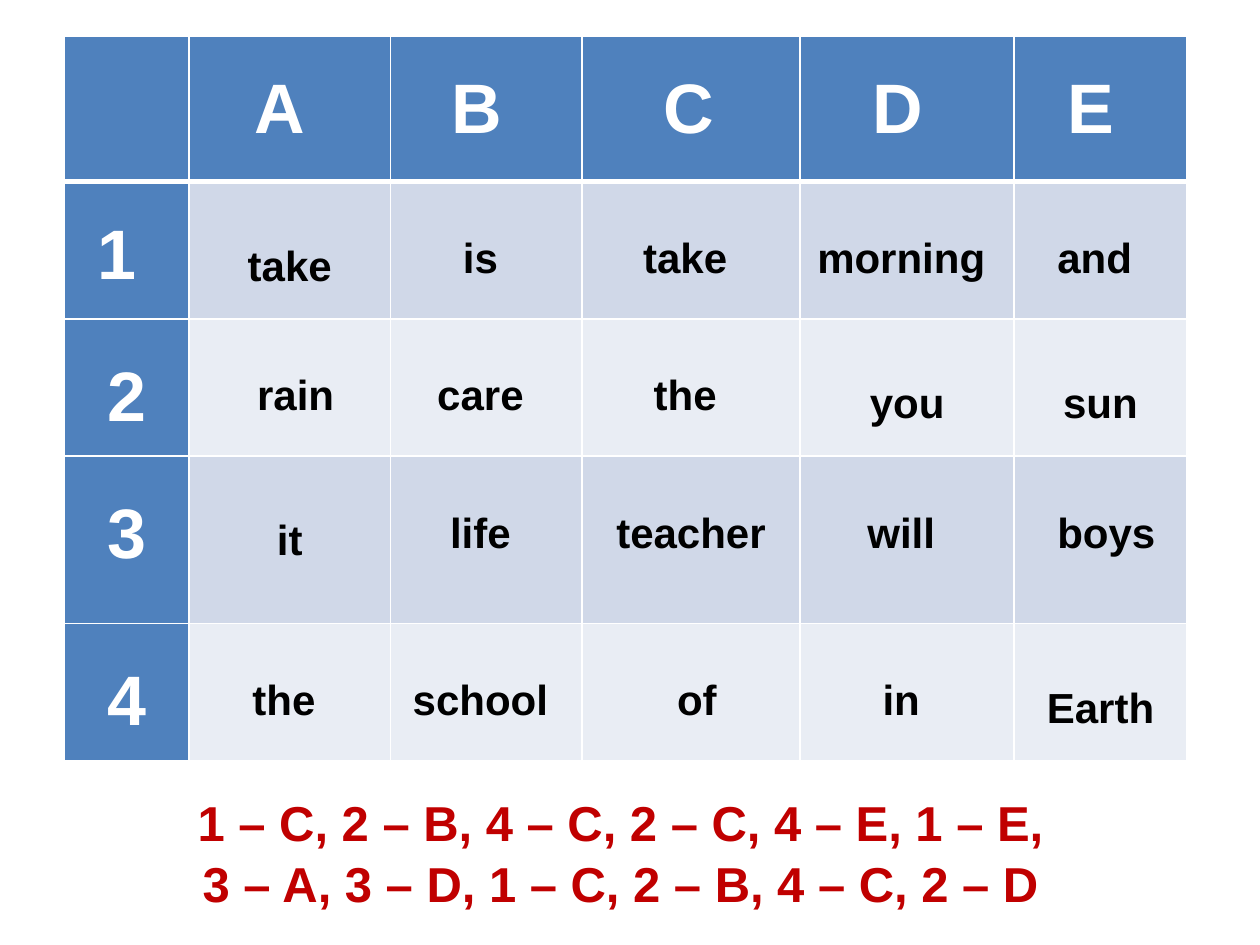
from dataclasses import dataclass

from lxml import etree
from pptx import Presentation
from pptx.dml.color import RGBColor
from pptx.enum.text import PP_ALIGN
from pptx.oxml.ns import qn
from pptx.util import Inches, Pt

CENTER = PP_ALIGN.CENTER

# Each cell: text, sideways nudge (-1 left, 0 none, 1 right), top inset in inches
MID, LOW = 0.43, 0.49
HEADS = [("", 0, 0), ("А", -1, 0.27), ("В", -1, 0.27),
         ("С", -0.25, 0.27), ("D", -1, 0.27), ("Е", -1, 0.27)]
WORDS = [
    [("1", -1, 0.28), ("take", 0, LOW), ("is", -1, MID),
     ("take", -1, MID), ("morning", -1, MID), ("and", -1, MID)],
    [("2", 0, 0.31), ("rain", 1, MID), ("care", -1, MID),
     ("the", -1, MID), ("you", 0, LOW), ("sun", 0, LOW)],
    [("3", 0, 0.31), ("it", 0, LOW), ("life", -1, MID),
     ("teacher", 0, MID), ("will", -1, MID), ("boys", 1, MID)],
    [("4", 0, 0.31), ("the", -1, MID), ("school", -1, MID),
     ("of", 1, MID), ("in", -1, MID), ("Earth", 0, LOW)],
]
COLS = [0.99, 1.6, 1.52, 1.73, 1.7, 1.37]
ROWS = [1.15, 1.09, 1.09, 1.33, 1.09]
CODE = ["1 – C, 2 – B, 4 – C, 2 – C, 4 – E, 1 – E,",
        "3 – A, 3 – D, 1 – C, 2 – B, 4 – C, 2 – D"]


@dataclass(frozen=True)
class Theme:
    font: str = "Arial"
    head: str = "4F81BD"
    bands: tuple = ("D0D8E8", "E9EDF4")
    white: str = "FFFFFF"
    black: str = "000000"
    red: str = "C00000"
    big: int = 40
    word: int = 24
    code: int = 28


class Page:
    def __init__(self, slide, theme):
        self.slide = slide
        self.theme = theme

    def add_run(self, para, text, size, color):
        para.alignment = CENTER
        run = para.add_run()
        run.text = text
        run.font.name = self.theme.font
        run.font.size = Pt(size)
        run.font.bold = True
        run.font.color.rgb = RGBColor.from_string(color)

    def edge(self, cell, side, width):
        line = etree.SubElement(cell._tc.get_or_add_tcPr(), qn("a:ln" + side),
                                w=str(Pt(width)))
        fill = etree.SubElement(line, qn("a:solidFill"))
        etree.SubElement(fill, qn("a:srgbClr"), val=self.theme.white)

    def cell(self, cell, row, col, item):
        text, nudge, top = item
        theme = self.theme
        label = row == 0 or col == 0
        size = theme.big if label else theme.word
        for side in "LRTB":
            thick = (row, side) in ((0, "B"), (1, "T"))
            self.edge(cell, side, 3 if thick else 1)
        cell.fill.solid()
        fill = theme.head if label else theme.bands[(row - 1) % 2]
        cell.fill.fore_color.rgb = RGBColor.from_string(fill)
        shift = size * 0.28 / 72  # width of one space
        cell.margin_left = Inches(0.07 + shift * max(nudge, 0))
        cell.margin_right = Inches(0.07 + shift * max(-nudge, 0))
        cell.margin_top = Inches(top)
        cell.margin_bottom = 0
        if text:
            self.add_run(cell.text_frame.paragraphs[0], text, size,
                         theme.white if label else theme.black)

    def table(self, left, top, grid):
        frame = self.slide.shapes.add_table(
            len(ROWS), len(COLS), Inches(left), Inches(top),
            Inches(sum(COLS)), Inches(sum(ROWS)))
        table = frame.table
        table.first_row = table.horz_banding = False
        for col, width in zip(table.columns, COLS):
            col.width = Inches(width)
        for row, height in zip(table.rows, ROWS):
            row.height = Inches(height)
        for r, items in enumerate(grid):
            for c, item in enumerate(items):
                self.cell(table.cell(r, c), r, c, item)

    def text(self, left, top, width, height, lines):
        box = self.slide.shapes.add_textbox(
            Inches(left), Inches(top), Inches(width), Inches(height))
        frame = box.text_frame
        frame.word_wrap = True
        frame.margin_top = Inches(0.1)
        for i, line in enumerate(lines):
            para = frame.add_paragraph() if i else frame.paragraphs[0]
            para.space_before = Pt(1.5 if i else 0)
            self.add_run(para, line, self.theme.code, self.theme.red)


def main():
    deck = Presentation()
    deck.slide_width, deck.slide_height = Inches(10), Inches(7.5)
    page = Page(deck.slides.add_slide(deck.slide_layouts[6]), Theme())
    page.text(0.2, 6.19, 9.45, 1.04, CODE)
    page.table(0.51, 0.29, [HEADS] + WORDS)
    deck.save("out.pptx")


if __name__ == "__main__":
    main()
